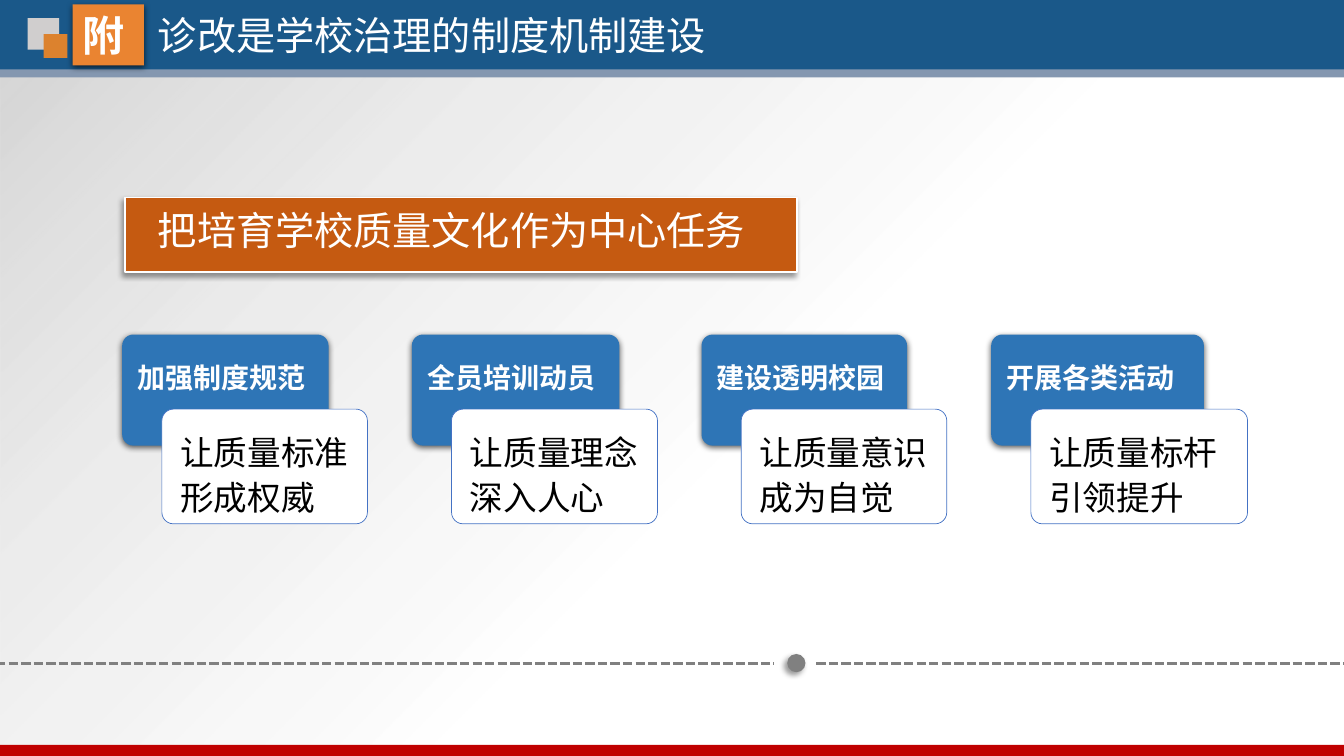
import lxml.etree
import pptx
import pptx.dml.color
import pptx.enum.dml
import pptx.enum.shapes
import pptx.enum.text
import pptx.oxml
import pptx.oxml.ns
import pptx.util

Cm = pptx.util.Cm
Kind = pptx.enum.shapes.MSO_SHAPE
Anchor = pptx.enum.text.MSO_ANCHOR
Align = pptx.enum.text.PP_ALIGN
qn = pptx.oxml.ns.qn


class Theme:
    font = "Noto Sans CJK SC"
    white, black, grey = "FFFFFF", "000000", "808080"
    navy, steel, silver = "1A5889", "8497B0", "D0CECE"
    amber, orange, rust = "DC822E", "EA8431", "C55A11"
    blue, edge, red = "2E75B6", "4472C4", "C00000"
    title, badge, head, body = 28, 30, 20, 24
    # Shadows: opacity %, blur pt, distance pt, angle
    soft = (63, 4.5, 1.5, 90)
    cast = (40, 4, 3, 135)
    # Backdrop stops: position %, colour, opacity %
    stops = ((0, "A6A6A6", 50), (27, "D6D6D6", 46), (57, "FFFFFF", 45))


def color(code):
    return pptx.dml.color.RGBColor.from_string(code)


def add_node(base, tag, **attrs):
    node = lxml.etree.SubElement(base, qn(tag))
    for name, value in attrs.items():
        node.set(name, str(value))
    return node


def write(shape, text, size, ink=Theme.white, bold=False, align=Align.LEFT,
          anchor=Anchor.TOP, inset=(0.25, 0.13, 0.25, 0.13), pitch=None):
    frame = shape.text_frame
    frame.word_wrap = True
    frame.vertical_anchor = anchor
    (frame.margin_left, frame.margin_top,
     frame.margin_right, frame.margin_bottom) = map(Cm, inset)
    para = frame.paragraphs[0]
    para.alignment = align
    if pitch:
        para.line_spacing = pptx.util.Pt(pitch)
    run = para.add_run()
    run.text = text
    run.font.size = pptx.util.Pt(size)
    run.font.bold = bold
    run.font.name = Theme.font
    run.font.color.rgb = color(ink)
    add_node(run.font._element, "a:ea", typeface=Theme.font)


class Deck:
    def __init__(self, theme):
        self.theme = theme
        self.file = pptx.Presentation()
        self.file.slide_width = Cm(33.87)
        self.file.slide_height = Cm(19.05)
        self.slide = self.file.slides.add_slide(self.file.slide_layouts[6])
        self.host = self.slide.shapes

    def group(self):
        self.host = self.slide.shapes.add_group_shape().shapes

    def ungroup(self):
        self.host = self.slide.shapes

    def shape(self, box, fill, kind=Kind.RECTANGLE, line=None, width=1,
              shade=None):
        item = self.host.add_shape(kind, *map(Cm, box))
        item.fill.solid()
        item.fill.fore_color.rgb = color(fill)
        if line:
            item.line.color.rgb = color(line)
            item.line.width = pptx.util.Pt(width)
        else:
            item.line.fill.background()
        item.shadow.inherit = False
        if shade:
            depth, blur, dist, angle = shade
            effect = item._element.spPr.find(qn("a:effectLst"))
            outer = add_node(effect, "a:outerShdw", blurRad=pptx.util.Pt(blur),
                             dist=pptx.util.Pt(dist), dir=angle * 60000,
                             algn="ctr", rotWithShape=0)
            tint = add_node(outer, "a:srgbClr", val=self.theme.black)
            add_node(tint, "a:alpha", val=depth * 1000)
        return item

    def panel(self, box, fill, **style):
        item = self.shape(box, fill, Kind.ROUNDED_RECTANGLE, **style)
        item.adjustments[0] = 0.1
        return item

    def label(self, box, text, size, **style):
        write(self.host.add_textbox(*map(Cm, box)), text, size, **style)

    def backdrop(self):
        item = self.shape((0, 0, 33.87, 19.05), self.theme.white)
        props = item._element.spPr
        grad = lxml.etree.Element(qn("a:gradFill"), rotWithShape="1")
        stops = add_node(grad, "a:gsLst")
        for place, code, alpha in self.theme.stops:
            stop = add_node(stops, "a:gs", pos=place * 1000)
            tint = add_node(stop, "a:srgbClr", val=code)
            add_node(tint, "a:alpha", val=alpha * 1000)
        add_node(grad, "a:lin", ang=45 * 60000, scaled=0)
        props.replace(props.find(qn("a:solidFill")), grad)

    def dashes(self, start, end, level):
        item = self.host.add_connector(
            pptx.enum.shapes.MSO_CONNECTOR.STRAIGHT,
            *map(Cm, (start, level, end, level)))
        item.line.color.rgb = color(self.theme.grey)
        item.line.width = pptx.util.Pt(2.25)
        item.line.dash_style = pptx.enum.dml.MSO_LINE.SQUARE_DOT
        add_node(item._element.spPr, "a:effectLst")

    def card(self, left, widths, head, body):
        look = self.theme
        self.group()
        back = self.panel((left, 8.43, widths[0], 2.8), look.blue,
                          shade=look.soft)
        write(back, head, look.head, bold=True, pitch=32,
              inset=(0.3, 0.28, 0.3, 0.9))
        front = self.panel((left + 1, 10.31, widths[1], 2.89), look.white,
                           line=look.edge, width=0.5)
        write(front, body, look.body, ink=look.black, pitch=32,
              inset=(0.38, 0.38, 0.25, 0.25))
        self.ungroup()


def main():
    look = Theme()
    deck = Deck(look)
    deck.backdrop()

    # Four cards at an even step
    cards = [
        ("加强制度规范", "让质量标准形成权威", (5.2, 5.18)),
        ("全员培训动员", "让质量理念深入人心", (5.23, 5.19)),
        ("建设透明校园", "让质量意识成为自觉", (5.18, 5.18)),
        ("开展各类活动", "让质量标杆引领提升", (5.36, 5.46)),
    ]
    for index, (head, body, widths) in enumerate(cards):
        deck.card(3.08 + 7.3 * index, widths, head, body)

    # Banner
    deck.group()
    deck.shape((3.15, 4.98, 16.94, 1.88), look.rust, line=look.white,
               shade=look.cast)
    deck.label((3.73, 5.08, 15.47, 2.49), "把培育学校质量文化作为中心任务",
               look.title)
    deck.ungroup()

    # Dashed rule with a dot
    deck.dashes(-0.1, 19.51, 16.71)
    deck.dashes(20.57, 33.87, 16.71)
    deck.shape((19.84, 16.48, 0.46, 0.46), look.grey, Kind.OVAL,
               shade=look.cast)

    # Title bar
    deck.shape((0, 0, 33.87, 1.93), look.navy)
    deck.shape((0, 1.75, 33.87, 0.2), look.steel)
    deck.shape((0.7, 0.46, 0.79, 0.79), look.silver)
    deck.shape((1.1, 0.86, 0.6, 0.6), look.amber)
    deck.label((3.58, 0.15, 14.61, 1.65), "诊改是学校治理的制度机制建设",
               look.title, align=Align.CENTER)
    badge = deck.shape((1.83, 0.11, 1.8, 1.54), look.orange, shade=look.soft)
    write(badge, "附", look.badge, bold=True, anchor=Anchor.MIDDLE)

    # Bottom strip
    deck.shape((0, 18.77, 33.87, 0.28), look.red)
    deck.file.save("out.pptx")


if __name__ == "__main__":
    main()
